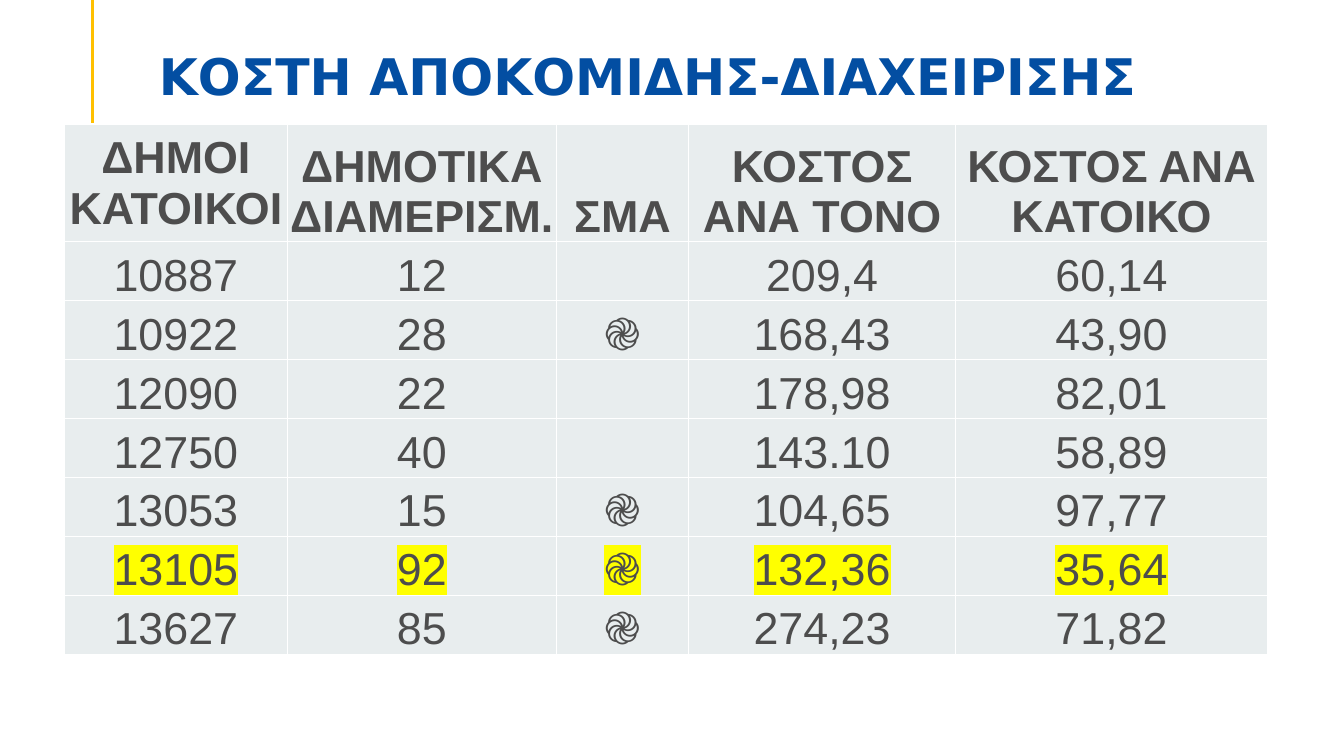
from dataclasses import dataclass
from lxml import etree
from pptx import Presentation
from pptx.dml.color import RGBColor
from pptx.enum.shapes import MSO_CONNECTOR
from pptx.enum.text import MSO_ANCHOR, MSO_AUTO_SIZE, PP_ALIGN
from pptx.oxml.ns import qn
from pptx.util import Inches, Pt

CENTER = PP_ALIGN.CENTER
BOTTOM, MIDDLE = MSO_ANCHOR.BOTTOM, MSO_ANCHOR.MIDDLE
STRAIGHT = MSO_CONNECTOR.STRAIGHT


@dataclass(frozen=True)
class Theme:
    title: str = "034EA2"
    accent: str = "FFC000"
    text: str = "4D4D4D"
    cell: str = "E8EDEE"
    border: str = "FFFFFF"
    highlight: str = "FFFF00"
    title_font: str = "DejaVu Sans"
    body_font: str = "Arial"
    title_size: int = 36
    body_size: int = 32


theme = Theme()


def style_font(font, name, size, color, bold):
    font.name = name
    font.size = Pt(size)
    font.bold = bold
    font.color.rgb = RGBColor.from_string(color)


def add_color(parent, tag, color):
    holder = etree.SubElement(parent, qn(tag))
    etree.SubElement(holder, qn("a:srgbClr"), val=color)


MARK = "֎"
HEADERS = ["ΔΗΜΟΙ\nΚΑΤΟΙΚΟΙ", "ΔΗΜΟΤΙΚΑ ΔΙΑΜΕΡΙΣΜ.", "ΣΜΑ", "ΚΟΣΤΟΣ ΑΝΑ ΤΟΝΟ", "ΚΟΣΤΟΣ ΑΝΑ ΚΑΤΟΙΚΟ"]
MUNICIPALITIES = [
    ["10887", "12", "", "209,4", "60,14"],
    ["10922", "28", MARK, "168,43", "43,90"],
    ["12090", "22", "", "178,98", "82,01"],
    ["12750", "40", "", "143.10", "58,89"],
    ["13053", "15", MARK, "104,65", "97,77"],
    ["13105", "92", MARK, "132,36", "35,64"],
    ["13627", "85", MARK, "274,23", "71,82"],
]
HIGHLIGHTED = "13105"
COLUMN_WIDTHS = [2.21, 2.67, 1.31, 2.65, 3.09]
HEADER_HEIGHT, ROW_HEIGHT = 1.17, 0.585

deck = Presentation()
deck.slide_width, deck.slide_height = Inches(13.33), Inches(7.5)
page = deck.slides.add_slide(deck.slide_layouts[5])

rule = page.shapes.add_connector(STRAIGHT, Inches(0.92), 0, Inches(0.92), Inches(1.4))
rule.line.color.rgb = RGBColor.from_string(theme.accent)
rule.line.width = Pt(2.25)
etree.SubElement(rule._element.spPr, qn("a:effectLst"))

title = page.shapes.title
title.left, title.top = Inches(1.06), Inches(0.34)
title.width, title.height = Inches(10.91), Inches(0.72)
frame = title.text_frame
frame.text = "ΚΟΣΤΗ ΑΠΟΚΟΜΙΔΗΣ-ΔΙΑΧΕΙΡΙΣΗΣ"
frame.word_wrap = True
frame.auto_size = MSO_AUTO_SIZE.NONE
frame.vertical_anchor = BOTTOM
frame.margin_left, frame.margin_right = Inches(0.1), Inches(0.28)
frame.margin_top, frame.margin_bottom = Inches(0.05), 0
para = frame.paragraphs[0]
para.alignment = CENTER
para.line_spacing = 0.9
style_font(para.font, theme.title_font, theme.title_size, theme.title, True)

rows = [HEADERS] + MUNICIPALITIES
table_height = HEADER_HEIGHT + ROW_HEIGHT * len(MUNICIPALITIES)
table = page.shapes.add_table(
    len(rows), len(HEADERS), Inches(0.64), Inches(1.23),
    Inches(sum(COLUMN_WIDTHS)), Inches(table_height)).table
for column, width in zip(table.columns, COLUMN_WIDTHS):
    column.width = Inches(width)

for row_index, values in enumerate(rows):
    is_header = row_index == 0
    table.rows[row_index].height = Inches(HEADER_HEIGHT if is_header else ROW_HEIGHT)
    for column_index, value in enumerate(values):
        cell = table.cell(row_index, column_index)
        cell.text = value
        cell.margin_left = cell.margin_right = cell.margin_top = Inches(0.01)
        cell.margin_bottom = 0
        cell.vertical_anchor = MIDDLE if is_header and column_index == 0 else BOTTOM
        for side in ("a:lnL", "a:lnR", "a:lnT", "a:lnB"):
            border = etree.SubElement(cell._tc.get_or_add_tcPr(), qn(side), w=str(Pt(1)))
            add_color(border, "a:solidFill", theme.border)
        cell.fill.solid()
        cell.fill.fore_color.rgb = RGBColor.from_string(theme.cell)
        for para in cell.text_frame.paragraphs:
            para.alignment = CENTER
            style_font(para.font, theme.body_font, theme.body_size, theme.text, is_header)
            if values[0] == HIGHLIGHTED:
                for span in para.runs:
                    add_color(span._r.get_or_add_rPr(), "a:highlight", theme.highlight)

deck.save("out.pptx")
